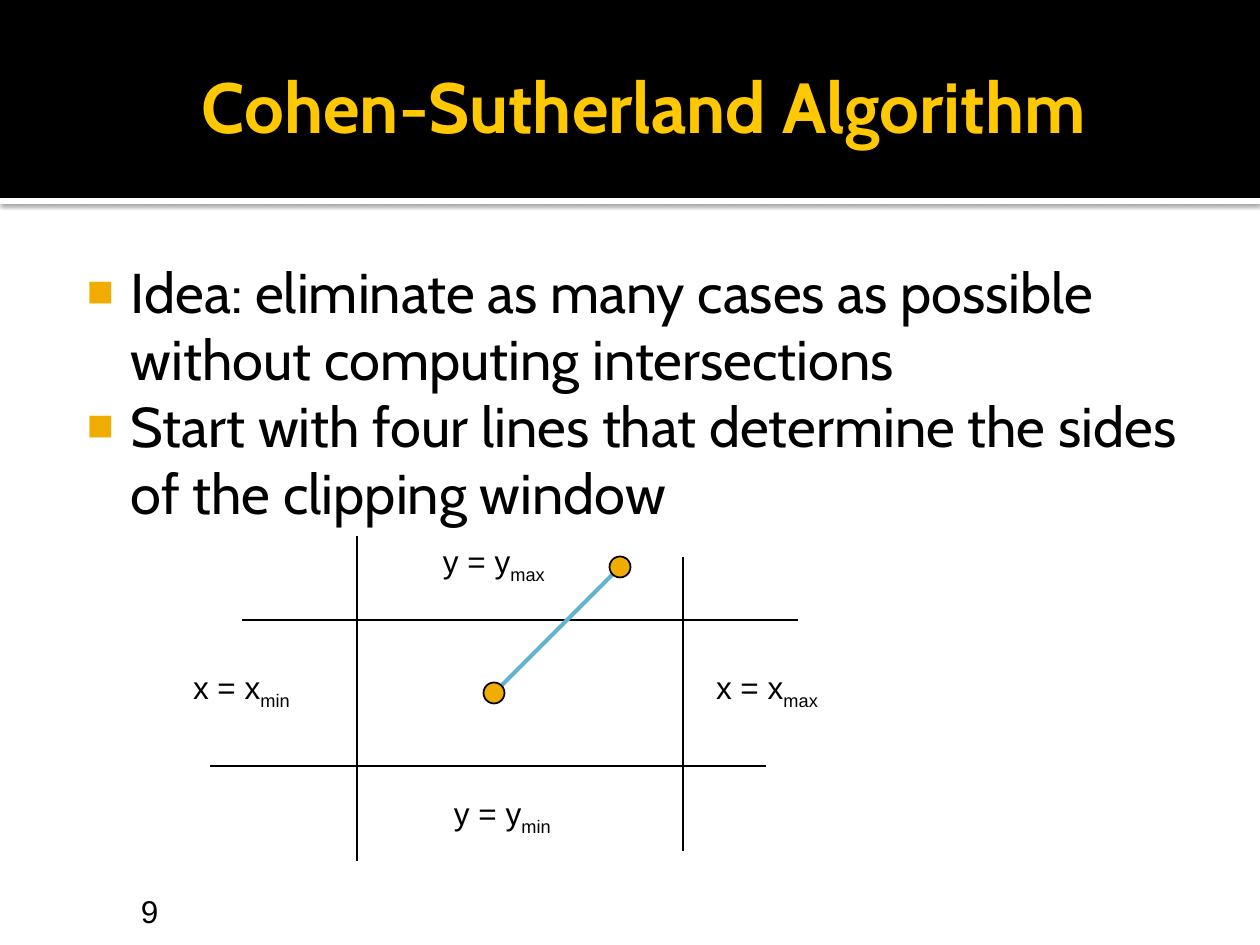
from lxml import etree
from pptx import Presentation
from pptx import util as u
from pptx.dml.color import RGBColor
from pptx.enum import shapes, text
from pptx.oxml import parse_xml
from pptx.oxml.ns import nsdecls, qn

PX = 914400 / 126
COLORS = {"ink": "000000", "paper": "FFFFFF", "title": "FFC800",
          "accent": "F0AD00", "segment": "60B5CC"}


def px(length):
    return u.Emu(round(length * PX))


class SlideBuilder:
    def __init__(self, slide):
        self.slide = slide

    def color(self, name):
        return RGBColor.from_string(COLORS[name])

    def shape(self, kind, box, fill, outline=None):
        part = self.slide.shapes.add_shape(kind, *map(px, box))
        part.shadow.inherit = False
        part.fill.solid()
        part.fill.fore_color.rgb = self.color(fill)
        if outline:
            part.line.color.rgb = self.color(outline)
            part.line.width = u.Pt(1)
        else:
            part.line.fill.background()
        return part

    def cast_shadow(self, part):
        effects = part._element.spPr.find(qn("a:effectLst"))
        effects.append(parse_xml(
            f'<a:outerShdw {nsdecls("a")} blurRad="31750" dist="10160" dir="5400000" '
            'algn="t" rotWithShape="0"><a:srgbClr val="000000">'
            '<a:alpha val="60000"/></a:srgbClr></a:outerShdw>'))

    def line(self, start, end, color="ink", width=1):
        edge = self.slide.shapes.add_connector(
            shapes.MSO_CONNECTOR.STRAIGHT, *map(px, start + end))
        edge.line.color.rgb = self.color(color)
        edge.line.width = u.Pt(width)
        etree.SubElement(edge._element.spPr, qn("a:effectLst"))

    def text(self, box, paragraphs, size, font="Arial", color="ink", bold=False,
             insets=(13, 6, 13, 6), **frame_format):
        frame = self.slide.shapes.add_textbox(*map(px, box)).text_frame
        sides = ("margin_left", "margin_top", "margin_right", "margin_bottom")
        settings = {"word_wrap": True, **dict(zip(sides, map(px, insets))), **frame_format}
        for name, value in settings.items():
            setattr(frame, name, value)
        for index, pieces in enumerate(paragraphs):
            paragraph = frame.paragraphs[0] if index == 0 else frame.add_paragraph()
            for position, piece in enumerate(pieces):
                run = paragraph.add_run()
                run.text = piece
                for name, value in {"name": font, "size": u.Pt(size), "bold": bold}.items():
                    setattr(run.font, name, value)
                run.font.color.rgb = self.color(color)
                if position:
                    run.font._element.set("baseline", "-25000")
        return frame

    def bullets(self, box, points, size, font, insets):
        frame = self.text(box, [[point] for point in points], size, font, insets=insets)
        for paragraph in frame.paragraphs:
            props = paragraph._p.get_or_add_pPr()
            props.set("marL", str(px(60)))
            props.set("indent", str(-px(44)))
            color = etree.SubElement(props, qn("a:buClr"))
            etree.SubElement(color, qn("a:srgbClr"), val=COLORS["accent"])
            etree.SubElement(props, qn("a:buSzPct"), val="80000")
            etree.SubElement(props, qn("a:buFont"), typeface="Arial")
            etree.SubElement(props, qn("a:buChar"), char="■")

    def label(self, left, top, axis, bound):
        self.text((left, top, 160, 63), [[f"{axis} = {axis}", bound]], 18,
                  word_wrap=False, auto_size=text.MSO_AUTO_SIZE.SHAPE_TO_FIT_TEXT)

    def endpoint(self, center):
        x, y = center
        radius = 10.5
        self.shape(shapes.MSO_SHAPE.OVAL, (x - radius, y - radius, 2 * radius, 2 * radius),
                   "accent", "ink")


def main():
    deck = Presentation()
    deck.slide_width, deck.slide_height = px(1260), px(945)
    page = SlideBuilder(deck.slides.add_slide(deck.slide_layouts[6]))

    band = page.shape(shapes.MSO_SHAPE.RECTANGLE, (0, 198, 1260, 6), "paper")
    page.cast_shadow(band)
    page.shape(shapes.MSO_SHAPE.RECTANGLE, (0, 0, 1260, 198), "ink")

    page.text((63, 892, 294, 38), [["9"]], 18, insets=(78, 6, 6, 0),
              vertical_anchor=text.MSO_ANCHOR.BOTTOM)
    page.text((189, 32, 966, 147), [["Cohen-Sutherland Algorithm"]], 40.5, "Cabin",
              "title", True, (13, 6, 6, 6), vertical_anchor=text.MSO_ANCHOR.MIDDLE)
    page.bullets((63, 244, 1134, 638), [
        "Idea: eliminate as many cases as possible without computing intersections",
        "Start with four lines that determine the sides of the clipping window",
    ], 32, "Cabin", (8, 13, 13, 6))

    for y, left, right in ((620, 242, 798), (766, 210, 766)):
        page.line((left, y), (right, y))
    for x, top, bottom in ((683, 557, 851), (357, 536, 861)):
        page.line((x, top), (x, bottom))

    for left, top, axis, bound in ((703, 662, "x", "max"), (180, 662, "x", "min"),
                                   (430, 536, "y", "max"), (441, 788, "y", "min")):
        page.label(left, top, axis, bound)

    inside, outside = (494, 693), (620, 567)
    page.line(inside, outside, "segment", 2.25)
    for center in (outside, inside):
        page.endpoint(center)

    deck.save("out.pptx")


if __name__ == "__main__":
    main()
